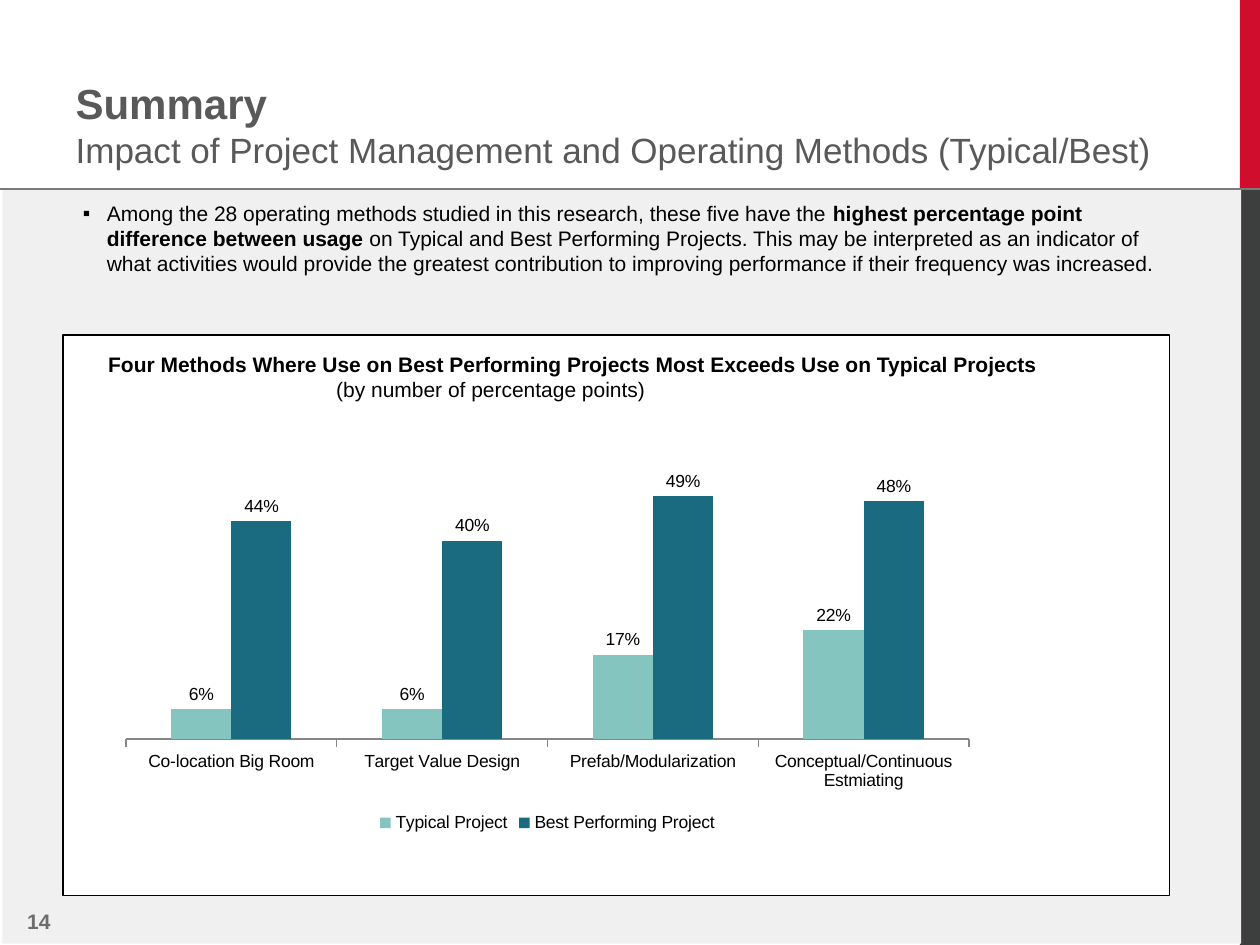
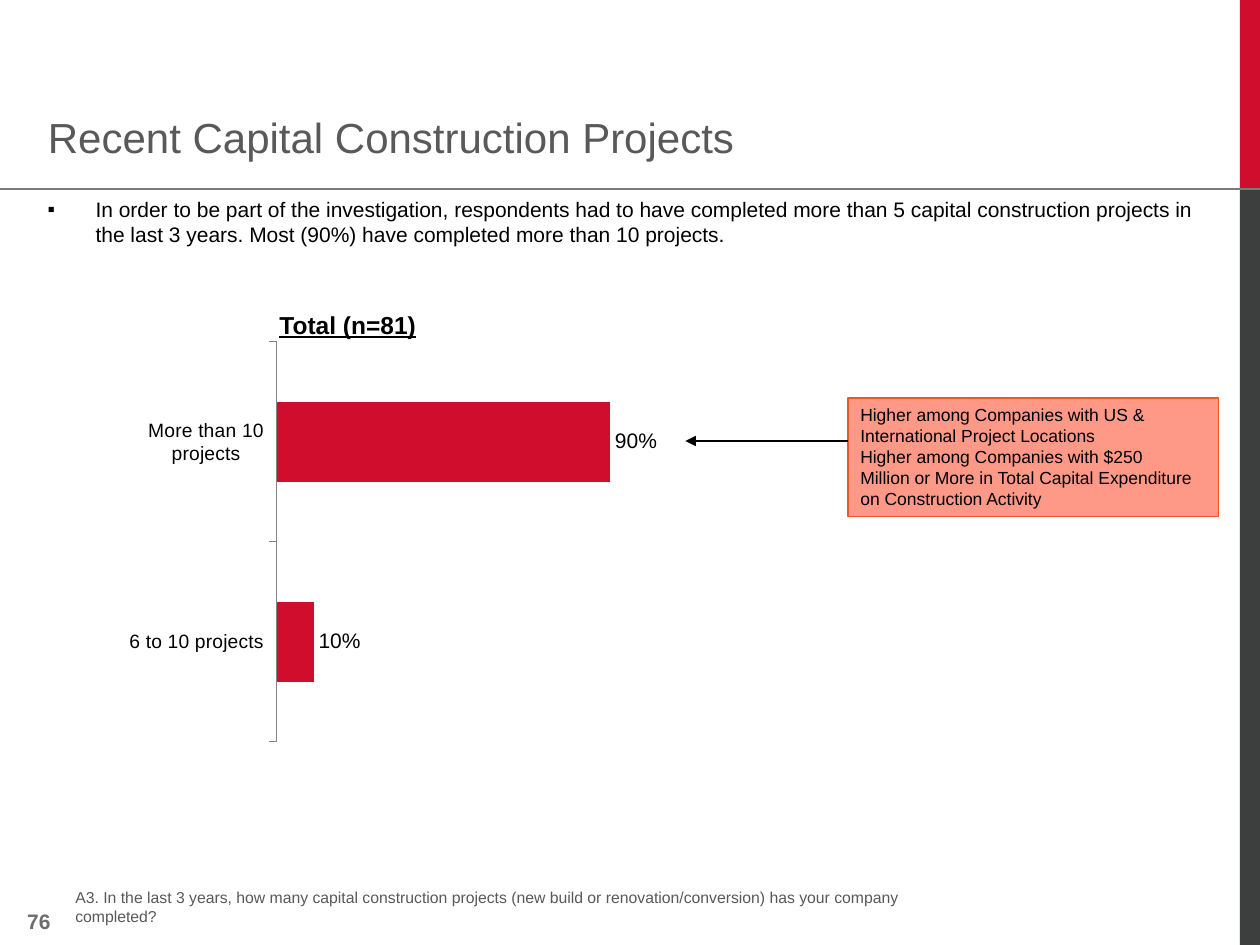
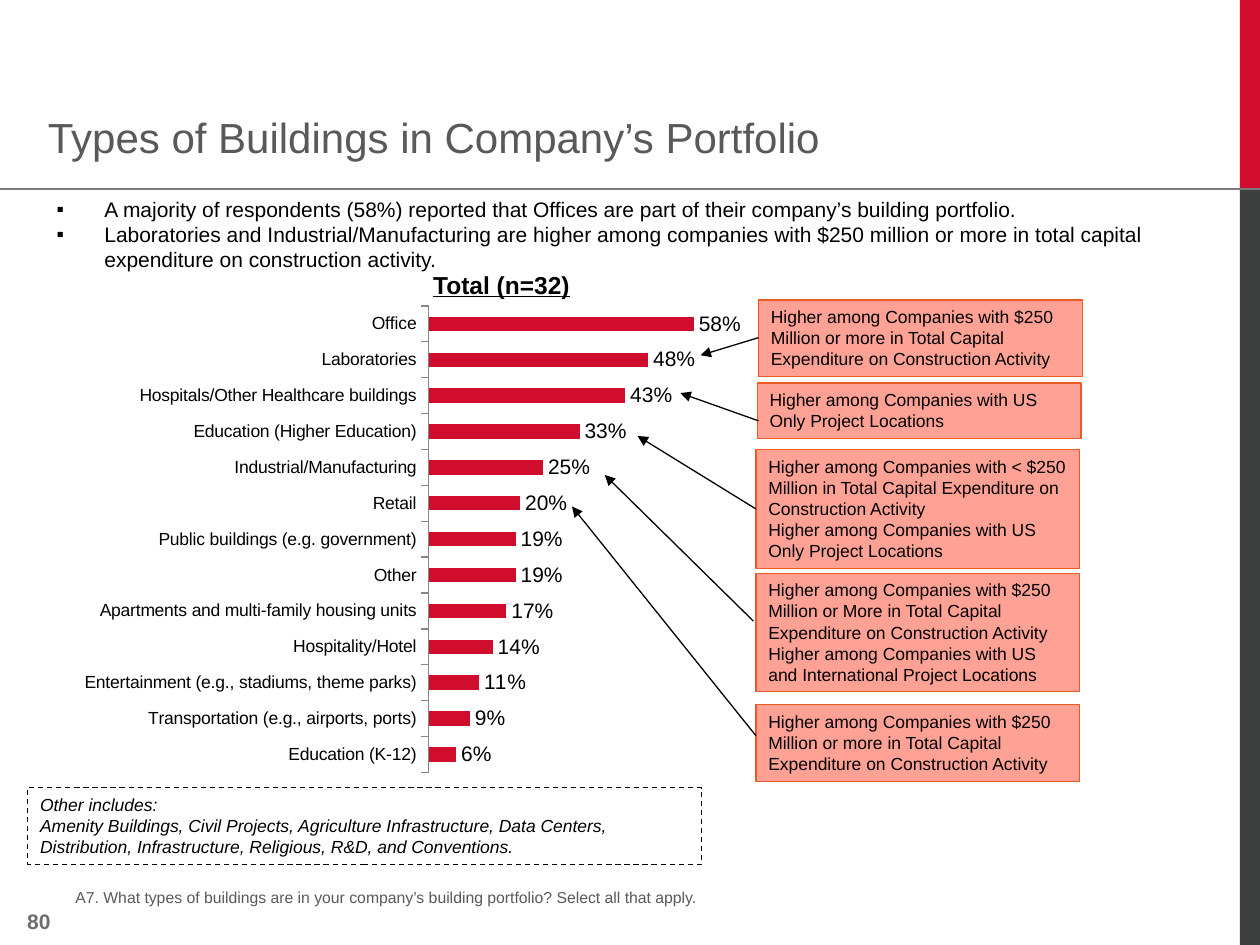
from pptx import Presentation
from pptx.chart.data import CategoryChartData
from pptx.dml.color import RGBColor
from pptx.enum.chart import XL_CHART_TYPE, XL_LABEL_POSITION, XL_LEGEND_POSITION, XL_TICK_MARK
from pptx.enum.dml import MSO_LINE
from pptx.enum.shapes import MSO_CONNECTOR, MSO_SHAPE
from pptx.enum.text import MSO_ANCHOR, MSO_AUTO_SIZE, PP_ALIGN
from pptx.oxml.ns import qn
from pptx.util import Inches, Pt
from lxml.etree import SubElement

FONT = "Arial"
RED, DARK, RULE = "D00D2D", "3D3E3E", "7A7A7A"
GRAY, PAGE, BLACK, WHITE = "595959", "6D6D6D", "000000", "FFFFFF"
PANEL, EDGE, AXIS = "F0F0F0", "EC5A24", "868686"
MINT, TEAL = "84C6BF", "1A6B7F"

SPEND = "Higher among Companies with $250 Million or more in Total Capital Expenditure on Construction Activity"

SUMMARY = {
    "page": "14",
    "title": ["Summary", "Impact of Project Management and Operating Methods (Typical/Best)"],
    "point": [
        ("Among the 28 operating methods studied in this research, these five have the ", False),
        ("highest percentage point difference between usage ", True),
        ("on Typical and Best Performing Projects. This may be interpreted as an indicator of what "
         "activities would provide the greatest contribution to improving performance if their "
         "frequency was increased.", False),
    ],
    "head": "Four Methods Where Use on Best Performing Projects Most Exceeds Use on Typical Projects",
    "unit": "(by number of percentage points)",
    "cats": ["Co-location Big Room", "Target Value Design", "Prefab/Modularization",
             "Conceptual/Continuous Estmiating"],
    "series": [("Typical Project", [0.06, 0.06, 0.17, 0.22], MINT),
               ("Best Performing Project", [0.44, 0.4, 0.49, 0.48], TEAL)],
}

RECENT = {
    "page": "76",
    "title": "Recent Capital Construction Projects",
    "points": ["In order to be part of the investigation, respondents had to have completed more than 5 "
               "capital construction projects in the last 3 years. Most (90%) have completed more than "
               "10 projects."],
    "point box": (0.28, 1.51, 9.31, 0.5),
    "total": "Total (n=81)",
    "total at": (2.02, 2.41),
    "rows": [("More than 10 projects", 0.9), ("6 to 10 projects", 0.1)],
    "chart box": (0.77, 2.56, 4.67, 3.48),
    "plot": (0.305, 0.044, 0.63, 0.912),
    "top": 1,
    "size": 11,
    "fill": "FF9987",
    "notes": [
        ((6.73, 3.16, 2.94, 0.94), (6.73, 3.5), (5.44, 3.5),
         ["Higher among Companies with US & International Project Locations",
          "Higher among Companies with $250\vMillion or More in Total Capital Expenditure on "
          "Construction Activity"]),
    ],
    "source": "A3. In the last 3 years, how many capital construction projects (new build or "
              "renovation/conversion) has your company completed?",
}

TYPES = {
    "page": "80",
    "title": "Types of Buildings in Company’s Portfolio",
    "points": ["A majority of respondents (58%) reported that Offices are part of their company’s "
               "building portfolio.",
               "Laboratories and Industrial/Manufacturing are higher among companies with $250 million "
               "or more in total capital expenditure on construction activity."],
    "point box": (0.35, 1.51, 9.31, 0.71),
    "total": "Total (n=32)",
    "total at": (3.24, 2.09),
    "rows": [("Office", 0.58), ("Laboratories", 0.48), ("Hospitals/Other Healthcare buildings", 0.43),
             ("Education (Higher Education)", 0.33), ("Industrial/Manufacturing", 0.25),
             ("Retail", 0.2), ("Public buildings (e.g. government)", 0.19), ("Other", 0.19),
             ("Apartments and multi-family housing units", 0.17), ("Hospitality/Hotel", 0.14),
             ("Entertainment (e.g., stadiums, theme parks)", 0.11),
             ("Transportation (e.g., airports, ports)", 0.09), ("Education (K-12)", 0.06)],
    "chart box": (0.49, 2.25, 5.77, 4.06),
    "plot": (0.505, 0.044, 0.44, 0.912),
    "top": 0.7,
    "size": 10,
    "fill": "FFA295",
    "notes": [
        ((6.02, 2.38, 2.57, 0.61), (6.02, 2.68), (5.56, 2.82), [SPEND]),
        ((6.01, 3.04, 2.57, 0.44), (6.02, 3.34), (5.4, 3.12),
         ["Higher among Companies with US Only Project Locations"]),
        ((6, 3.57, 2.57, 0.94), (6, 4.04), (5.06, 3.46),
         ["Higher among Companies with < $250 Million in Total Capital Expenditure on Construction Activity",
          "Higher among Companies with US Only Project Locations"]),
        ((6, 4.55, 2.57, 0.94), (5.98, 4.93), (4.8, 3.77),
         [SPEND.replace("or more", "or More"),
          "Higher among Companies with US\vand International Project Locations"]),
        ((6, 5.59, 2.57, 0.61), (6, 5.84), (4.54, 4.02), [SPEND]),
    ],
    "source": "A7. What types of buildings are in your company’s building portfolio? Select all that apply.",
}
OTHER = ["Other includes:",
         "Amenity Buildings, Civil Projects, Agriculture Infrastructure, Data Centers, Distribution, "
         "Infrastructure, Religious, R&D, and Conventions."]


def color(code):
    return RGBColor.from_string(code)


def place(shape, box):
    shape.left, shape.top, shape.width, shape.height = map(Inches, box)


def style(font, size, code=BLACK, bold=False, italic=False, under=False):
    font.name, font.size, font.bold = FONT, Pt(size), bold
    font.italic, font.underline = italic, under
    font.color.rgb = color(code)


def indent(para, left, first=0, mark=None):
    props = para._p.get_or_add_pPr()
    props.set("marL", str(Inches(left)))
    props.set("indent", str(Inches(first)))
    if mark:
        SubElement(props, qn("a:buFont")).set("typeface", FONT)
        SubElement(props, qn("a:buChar")).set("char", mark)


def write(frame, texts, size, code=BLACK, align=PP_ALIGN.LEFT, dent=None, **look):
    frame.word_wrap = True
    frame.auto_size = MSO_AUTO_SIZE.NONE
    for i, text in enumerate(texts):
        para = frame.add_paragraph() if i else frame.paragraphs[0]
        para.text = text
        para.alignment = align
        if dent:
            indent(para, *dent)
        style(para.font, size, code, **look)
    return frame


def label(slide, box, texts, size, code=BLACK, **look):
    frame = slide.shapes.add_textbox(*map(Inches, box)).text_frame
    return write(frame, texts, size, code, **look)


def block(slide, box, fill=None, edge=None):
    shape = slide.shapes.add_shape(MSO_SHAPE.RECTANGLE, *map(Inches, box))
    shape.shadow.inherit = False
    if fill:
        shape.fill.solid()
        shape.fill.fore_color.rgb = color(fill)
    else:
        shape.fill.background()
    if edge:
        shape.line.color.rgb = color(edge)
        shape.line.width = Pt(0.75)
    else:
        shape.line.fill.background()
    shape.text_frame.vertical_anchor = MSO_ANCHOR.TOP
    return shape


def line(slide, start, end, code=BLACK, width=0.75, arrow=False):
    link = slide.shapes.add_connector(MSO_CONNECTOR.STRAIGHT, *map(Inches, start + end))
    link.line.color.rgb = color(code)
    link.line.width = Pt(width)
    if arrow:
        SubElement(link.line._get_or_add_ln(), qn("a:tailEnd")).set("type", "triangle")
    SubElement(link._element.spPr, qn("a:effectLst"))


def start(deck, page, box, anchor, panel=None):
    slide = deck.slides.add_slide(deck.slide_layouts[5])
    place(slide.shapes.title, box)
    slide.shapes.title.text_frame.vertical_anchor = anchor
    block(slide, (9.84, 0, 0.16, 1.5), RED)
    block(slide, (9.84, 1.5, 0.16, 6), DARK)
    line(slide, (10, 1.5), (0, 1.5), RULE, 1)
    if panel:
        block(slide, panel, PANEL)
    label(slide, (0, 7.16, 0.5, 0.22), [page], 12, PAGE, align=PP_ALIGN.RIGHT, bold=True)
    return slide


def graph(slide, kind, box, cats, series, top, sizes):
    data = CategoryChartData(number_format="0%")
    data.categories = cats
    for name, vals, _ in series:
        data.add_series(name, vals)
    chart = slide.shapes.add_chart(kind, *map(Inches, box), data).chart
    chart.has_title = chart.has_legend = False
    style(chart.font, sizes[0])
    axis, scale = chart.category_axis, chart.value_axis
    axis.major_tick_mark = XL_TICK_MARK.OUTSIDE
    axis.format.line.color.rgb = color(AXIS)
    style(axis.tick_labels.font, sizes[0])
    scale.visible = scale.has_major_gridlines = False
    scale.minimum_scale, scale.maximum_scale = 0, top
    plot = chart.plots[0]
    plot.gap_width, plot.overlap, plot.vary_by_categories = 150, 0, False
    for bar, (_, _, code) in zip(plot.series, series):
        bar.format.fill.solid()
        bar.format.fill.fore_color.rgb = color(code)
        tags = bar.data_labels
        tags.show_value = True
        tags.number_format, tags.number_format_is_linked = "0%", False
        tags.position = XL_LABEL_POSITION.OUTSIDE_END
        style(tags.font, sizes[1])
    return chart


def fit(chart, plot):
    area = chart.element.xpath(".//c:plotArea")[0]
    for old in area.findall(qn("c:layout")):
        area.remove(old)
    layout = SubElement(area, qn("c:layout"))
    area.insert(0, layout)
    manual = SubElement(layout, qn("c:manualLayout"))
    pairs = [("layoutTarget", "inner"), ("xMode", "edge"), ("yMode", "edge"), *zip("xywh", plot)]
    for tag, val in pairs:
        SubElement(manual, qn("c:" + tag)).set("val", str(val))


def summary(deck, info):
    slide = start(deck, info["page"], (0.5, 0.19, 8.99, 1.21), MSO_ANCHOR.BOTTOM,
                  (0.02, 1.51, 9.83, 5.98))
    frame = write(slide.shapes.title.text_frame, info["title"], 20, GRAY)
    style(frame.paragraphs[0].font, 24, GRAY, bold=True)
    block(slide, (0.5, 2.66, 8.78, 4.45), WHITE, BLACK)
    frame = label(slide, (0.72, 2.74, 7.69, 0.5), [info["head"], info["unit"]], 12)
    head, unit = frame.paragraphs
    head.font.bold = True
    indent(head, 0.04)
    indent(unit, 1.85)
    frame = label(slide, (0.25, 1.54, 9.24, 1.04), [""], 12, dent=(0.5, -0.19, "▪"))
    for text, bold in info["point"]:
        run = frame.paragraphs[0].add_run()
        run.text, run.font.bold = text, bold
    chart = graph(slide, XL_CHART_TYPE.COLUMN_CLUSTERED, (0.86, 3.44, 6.97, 3.21),
                  info["cats"], info["series"], 0.6, (10, 10))
    chart.has_legend = True
    chart.legend.position = XL_LEGEND_POSITION.BOTTOM
    chart.legend.include_in_layout = False
    style(chart.legend.font, 10)


def survey(deck, info):
    slide = start(deck, info["page"], (0.28, 0.91, 9.14, 0.42), MSO_ANCHOR.TOP)
    frame = write(slide.shapes.title.text_frame, [info["title"]], 24, GRAY)
    frame.paragraphs[0].line_spacing = 0.8
    cats, vals = zip(*info["rows"])
    chart = graph(slide, XL_CHART_TYPE.BAR_CLUSTERED, info["chart box"], cats,
                  [("Series 1", vals, RED)], info["top"], (info["size"], 12))
    chart.category_axis.reverse_order = True
    fit(chart, info["plot"])
    label(slide, info["point box"], info["points"], 12, dent=(0.38, -0.38, "▪"))
    label(slide, info["total at"] + (1.48, 0.34), [info["total"]], 14,
          align=PP_ALIGN.CENTER, bold=True, under=True)
    label(slide, (0.5, 7, 7.06, 0.4), [info["source"]], 9, GRAY)
    for box, tail, tip, texts in info["notes"]:
        write(block(slide, box, info["fill"], EDGE).text_frame, texts, 10)
        line(slide, tail, tip, arrow=True)
    return slide


def main():
    deck = Presentation()
    deck.slide_width, deck.slide_height = Inches(10), Inches(7.5)
    summary(deck, SUMMARY)
    survey(deck, RECENT)
    slide = survey(deck, TYPES)
    other = block(slide, (0.22, 6.25, 5.35, 0.61), edge=BLACK)
    other.line.dash_style = MSO_LINE.DASH
    write(other.text_frame, OTHER, 10, italic=True)
    deck.save("out.pptx")


if __name__ == "__main__":
    main()
